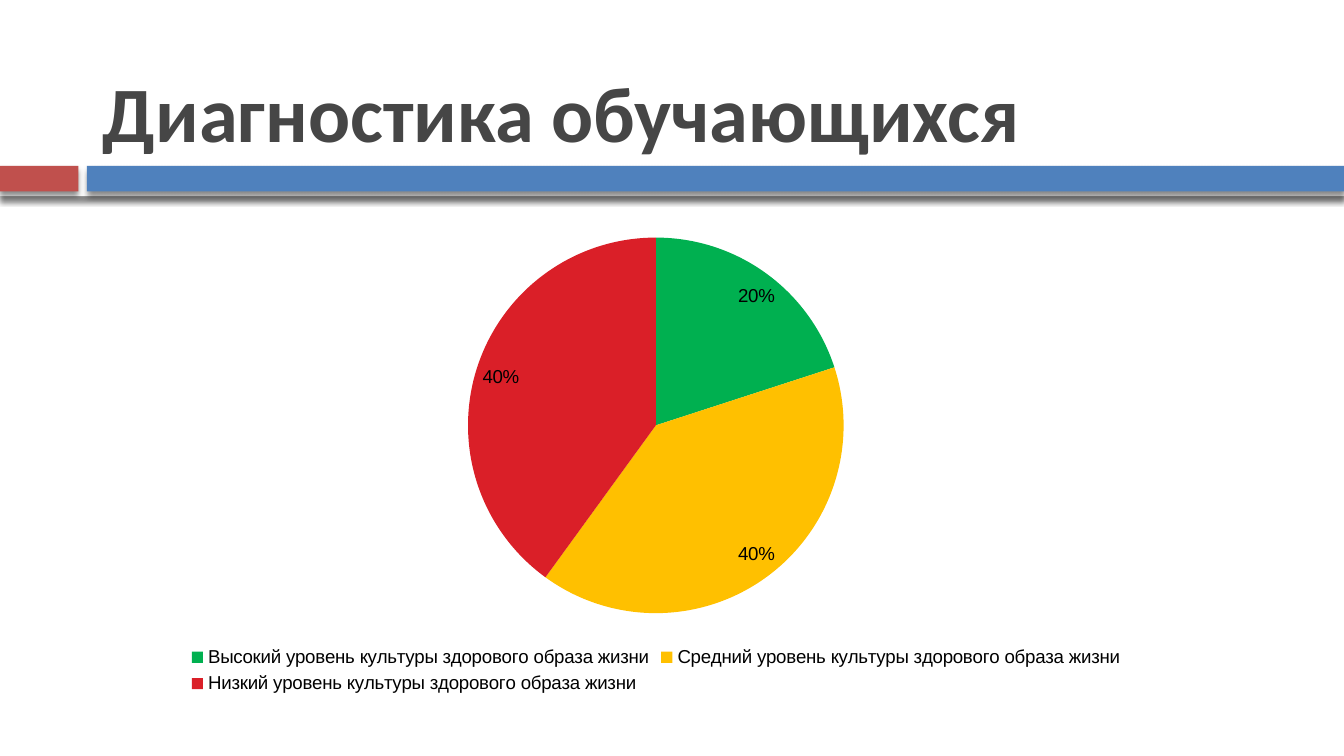
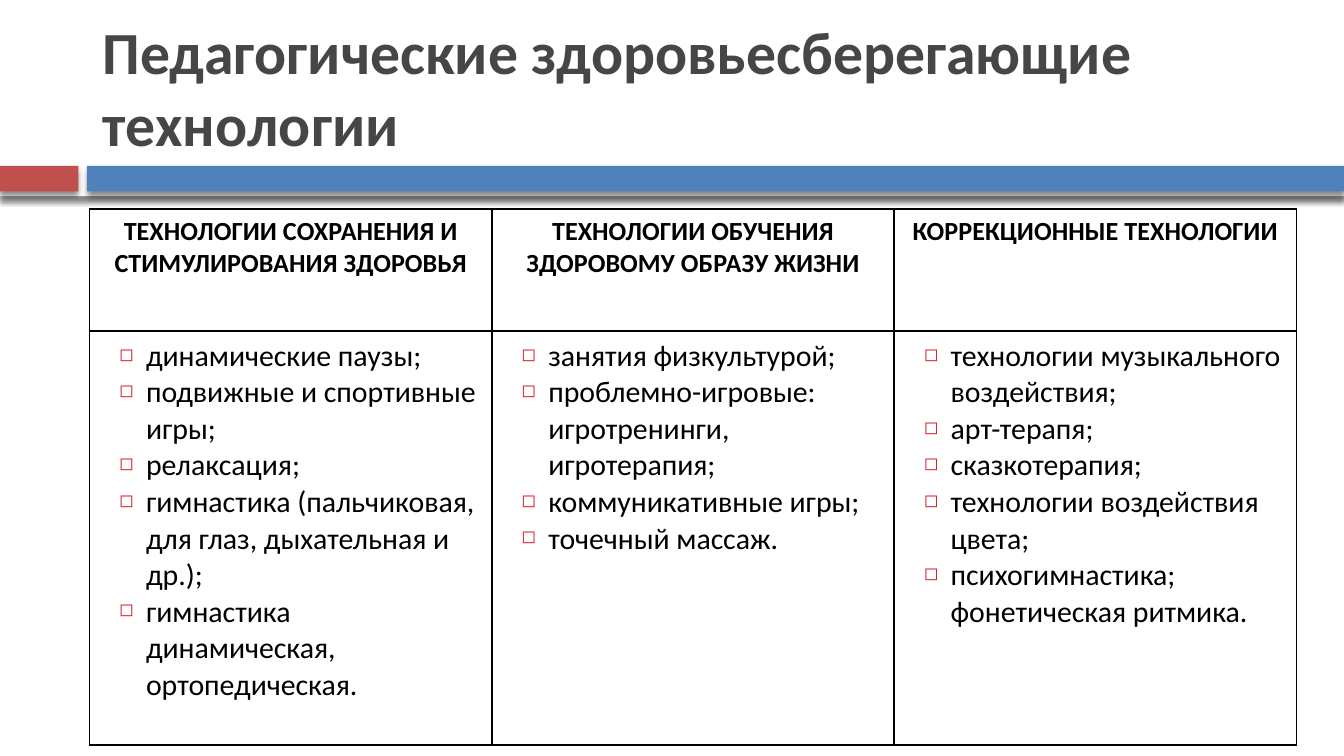
from collections import namedtuple

from lxml import etree
from pptx import Presentation
from pptx import util as u
from pptx.chart import data as chart_data
from pptx.dml.color import RGBColor
from pptx.enum import chart as charts, shapes, text
from pptx.oxml import ns

# Boxes are given in columns and rows of a fine square grid
COLUMNS, ROWS = 100, 56.25
CELL = u.Inches(0.1)
Box = namedtuple("Box", "left top width height")

TITLE_BOX = Box(6.67, 1.3, 89.2, 11)
WIDE_TITLE_BOX = TITLE_BOX._replace(width=90.6)
BAND_BOX = Box(0, 12, COLUMNS, 2.6)
PIE_BOX = Box(5.1, 16.3, 87.4, 35.75)
TABLE_BOX = Box(6.67, 15.55, 89.8, 39.9)

FONT, CHART_FONT = "Calibri", "Arial"
WHITE, BLACK, TITLE_GREY = "FFFFFF", "000000", "464646"
BAND_RED, BAND_BLUE = "C0504D", "4F81BD"
GREEN, AMBER, RED = "00B050", "FFC000", "DA1F28"

LEVELS = [
    ("Высокий уровень культуры здорового образа жизни", 20, GREEN),
    ("Средний уровень культуры здорового образа жизни", 40, AMBER),
    ("Низкий уровень культуры здорового образа жизни", 40, RED),
]

TECHNOLOGIES = {
    "ТЕХНОЛОГИИ СОХРАНЕНИЯ И СТИМУЛИРОВАНИЯ ЗДОРОВЬЯ": [
        "динамические паузы;",
        "подвижные и спортивные игры;",
        "релаксация;",
        "гимнастика (пальчиковая, для глаз, дыхательная и др.);",
        "гимнастика динамическая, ортопедическая.",
    ],
    "ТЕХНОЛОГИИ ОБУЧЕНИЯ ЗДОРОВОМУ ОБРАЗУ ЖИЗНИ": [
        "занятия физкультурой;",
        "проблемно-игровые: игротренинги, игротерапия;",
        "коммуникативные игры;",
        "точечный массаж.",
    ],
    "КОРРЕКЦИОННЫЕ ТЕХНОЛОГИИ": [
        "технологии музыкального воздействия;",
        "арт-терапя;",
        "сказкотерапия;",
        "технологии воздействия цвета;",
        "психогимнастика; фонетическая ритмика.",
    ],
}


def grid(length):
    return round(length * CELL)


def place(box):
    return [grid(length) for length in box]


def rgb(hex_string):
    return RGBColor.from_string(hex_string)


def apply(target, values):
    for name, value in values.items():
        setattr(target, name, value)


def style_font(font, size, color, bold=False, name=FONT):
    apply(font, {"name": name, "size": u.Pt(size), "bold": bold})
    font.color.rgb = rgb(color)


def add_xml(parent, tag, **attributes):
    return etree.SubElement(parent, ns.qn(tag), attributes)


# Shared parts: shadowed band and title
def add_shadow(shape):
    shape.shadow.inherit = False
    effects = shape.element.spPr.find(ns.qn("a:effectLst"))
    shadow = add_xml(effects, "a:outerShdw", blurRad=str(u.Pt(3)),
                     dist=str(u.Pt(2.4)), dir="5400000", rotWithShape="0")
    color = add_xml(shadow, "a:srgbClr", val=BLACK)
    add_xml(color, "a:alpha", val="45000")


def add_band(slide, box):
    stripe_top, stripe_height = box.top + 0.35, 1.9
    red_width, blue_start = 5.83, 6.46
    stripes = [
        (box, WHITE),
        (Box(box.left, stripe_top, red_width, stripe_height), BAND_RED),
        (Box(box.left + blue_start, stripe_top,
             box.width - blue_start, stripe_height), BAND_BLUE),
    ]
    for stripe_box, color in stripes:
        stripe = slide.shapes.add_shape(shapes.MSO_SHAPE.RECTANGLE, *place(stripe_box))
        stripe.fill.solid()
        stripe.fill.fore_color.rgb = rgb(color)
        stripe.line.fill.background()
        add_shadow(stripe)


def add_title(slide, box, wording, size):
    frame = slide.shapes.add_textbox(*place(box)).text_frame
    apply(frame, {"word_wrap": True, "vertical_anchor": text.MSO_ANCHOR.BOTTOM})
    run = frame.paragraphs[0].add_run()
    run.text = wording
    style_font(run.font, size, TITLE_GREY, bold=True)


def add_slide(deck, title_box, title, size):
    slide = deck.slides.add_slide(deck.slide_layouts[6])
    add_band(slide, BAND_BOX)
    add_title(slide, title_box, title, size)
    return slide


# Pie of diagnostic levels
def add_levels_pie(slide, box):
    names, values, colors = zip(*LEVELS)
    levels = chart_data.CategoryChartData()
    levels.categories = names
    levels.add_series("Series 1", values)
    pie = slide.shapes.add_chart(charts.XL_CHART_TYPE.PIE, *place(box), levels).chart
    apply(pie, {"has_title": False, "has_legend": True})
    style_font(pie.font, 10, BLACK, name=CHART_FONT)
    apply(pie.legend, {"position": charts.XL_LEGEND_POSITION.BOTTOM,
                       "include_in_layout": False})

    plot = pie.plots[0]
    apply(plot, {"vary_by_categories": True, "has_data_labels": True})
    apply(plot.data_labels, {
        "show_percentage": True, "show_value": False,
        "number_format": "0%", "number_format_is_linked": False,
        "position": charts.XL_LABEL_POSITION.BEST_FIT,
    })
    for index, color in enumerate(colors):
        sector = plot.series[0].points[index].format
        sector.fill.solid()
        sector.fill.fore_color.rgb = rgb(color)
        sector.line.fill.background()


# Table of technologies
def add_borders(cell):
    properties = cell._tc.get_or_add_tcPr()
    for index, side in enumerate(("a:lnL", "a:lnR", "a:lnT", "a:lnB")):
        border = etree.Element(ns.qn(side), w=str(u.Pt(0.96)))
        fill = add_xml(border, "a:solidFill")
        add_xml(fill, "a:srgbClr", val=BLACK)
        properties.insert(index, border)


def add_bullet(paragraph):
    properties = paragraph._p.get_or_add_pPr()
    properties.set("marL", str(u.Inches(0.35)))
    properties.set("indent", str(u.Inches(-0.2)))
    color = add_xml(properties, "a:buClr")
    add_xml(color, "a:srgbClr", val=RED)
    add_xml(properties, "a:buSzPct", val="60000")
    add_xml(properties, "a:buChar", char="◻")


def fill_cell(cell, lines, size, heading):
    cell.fill.background()
    apply(cell, {"margin_left": u.Inches(0.07), "margin_right": u.Inches(0.07),
                 "margin_top": u.Inches(0.05), "margin_bottom": u.Inches(0.05)})
    add_borders(cell)
    frame = cell.text_frame
    for index, line in enumerate(lines):
        paragraph = frame.add_paragraph() if index else frame.paragraphs[0]
        run = paragraph.add_run()
        run.text = line
        style_font(run.font, size, BLACK, bold=heading)
        if heading:
            paragraph.alignment = text.PP_ALIGN.CENTER
        else:
            add_bullet(paragraph)


def add_technology_table(slide, box):
    heading_height = 9.1
    table = slide.shapes.add_table(2, len(TECHNOLOGIES), *place(box)).table
    apply(table, {"first_row": False, "horz_banding": False})
    table.rows[0].height = grid(heading_height)
    table.rows[1].height = grid(box.height - heading_height)
    for index, (heading, methods) in enumerate(TECHNOLOGIES.items()):
        table.columns[index].width = grid(box.width / len(TECHNOLOGIES))
        fill_cell(table.cell(0, index), [heading], 14, heading=True)
        fill_cell(table.cell(1, index), methods, 16, heading=False)


def main():
    deck = Presentation()
    apply(deck, {"slide_width": grid(COLUMNS), "slide_height": grid(ROWS)})

    diagnostics = add_slide(deck, TITLE_BOX, "Диагностика обучающихся", 42)
    add_levels_pie(diagnostics, PIE_BOX)

    technologies = add_slide(
        deck, WIDE_TITLE_BOX, "Педагогические здоровьесберегающие технологии", 32)
    add_technology_table(technologies, TABLE_BOX)

    deck.save("out.pptx")


if __name__ == "__main__":
    main()
